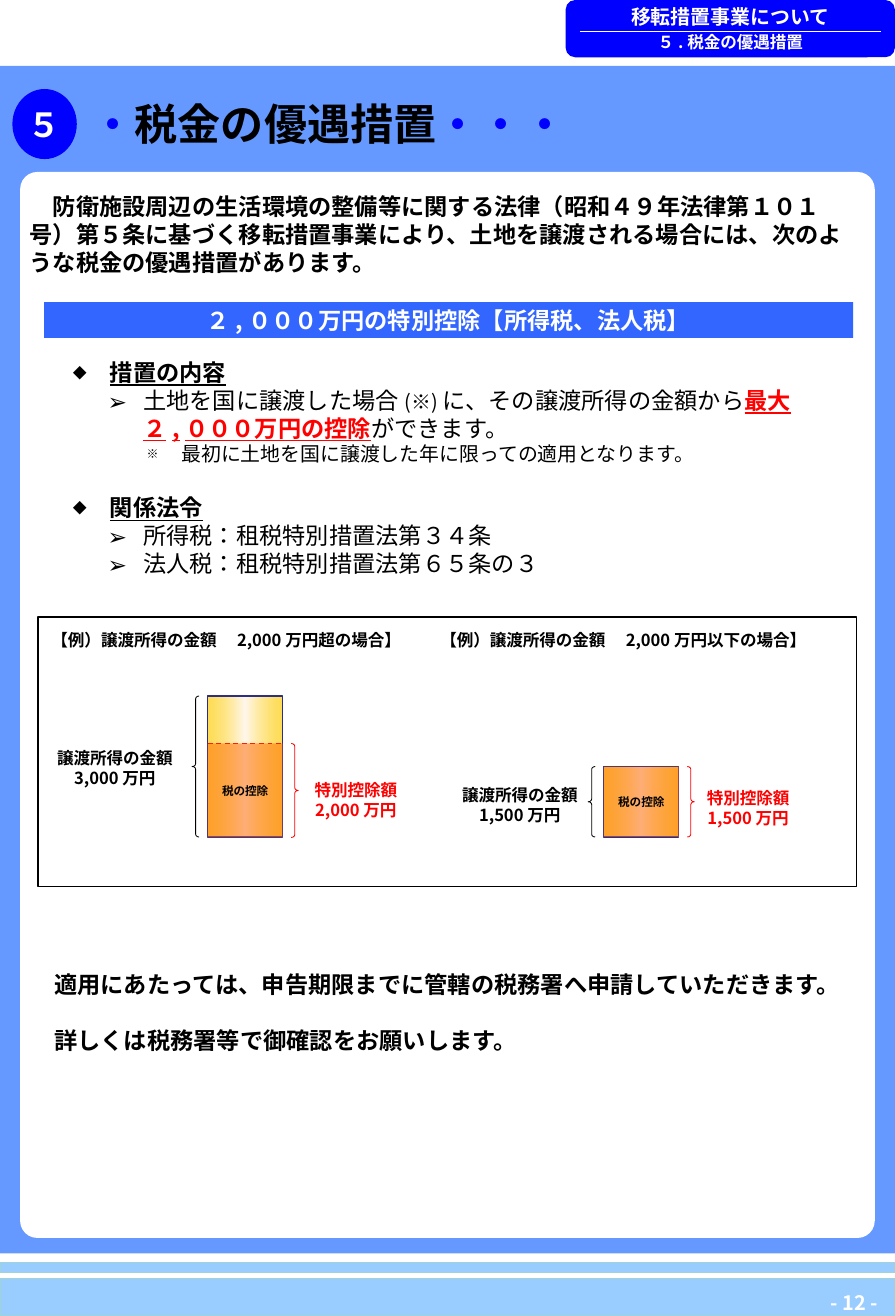
import pptx
import pptx.dml.color
import pptx.enum.dml
import pptx.enum.lang
import pptx.enum.shapes
import pptx.enum.text
import pptx.oxml
import pptx.oxml.ns
import pptx.util
from lxml import etree

Cm, Pt = pptx.util.Cm, pptx.util.Pt
RGB = pptx.dml.color.RGBColor
SHAPE = pptx.enum.shapes.MSO_SHAPE
ALIGN = pptx.enum.text.PP_ALIGN
ANCHOR = pptx.enum.text.MSO_ANCHOR
qn = pptx.oxml.ns.qn

FONT = "Noto Sans CJK JP"
BLACK = RGB(0x00, 0x00, 0x00)
WHITE = RGB(0xFF, 0xFF, 0xFF)
RED = RGB(0xFF, 0x00, 0x00)
BLUE = RGB(0x00, 0x00, 0xFF)
PAGE_BLUE = RGB(0x66, 0x99, 0xFF)
BAR_BLUE = RGB(0x33, 0x66, 0xFF)
BAND = RGB(0x99, 0xCC, 0xFF)
BAND_EDGE = RGB(0x9E, 0xD3, 0xD7)
NAVY = RGB(0x2D, 0x2D, 0x8A)
ORANGE = RGB(0xFF, 0x66, 0x00)
YELLOW = RGB(0xFF, 0xCC, 0x00)
CREAM = RGB(0xFF, 0xF8, 0xED)
INSETS = (0.25, 0.13, 0.25, 0.13)


def add_run(p, text, size=14, color=BLACK, bold=True, underline=False):
    r = p.add_run()
    r.text = text
    f = r.font
    f.name, f.size, f.bold, f.underline = FONT, Pt(size), bold, underline
    f.color.rgb = color
    f.language_id = pptx.enum.lang.MSO_LANGUAGE_ID.JAPANESE
    etree.SubElement(r._r.get_or_add_rPr(), qn("a:ea")).set("typeface", FONT)


def set_alpha(fill_parent, percent):
    for clr in fill_parent.iter(qn("a:srgbClr")):
        etree.SubElement(clr, qn("a:alpha")).set("val", str(percent * 1000))


class Page:
    def __init__(self, prs):
        self.s = prs.slides.add_slide(prs.slide_layouts[6])

    def shape(self, kind, x, y, w, h, fill=None, line=None, width=0.75, adj=()):
        sp = self.s.shapes.add_shape(kind, Cm(x), Cm(y), Cm(w), Cm(h))
        sp.shadow.inherit = False
        for i, value in enumerate(adj):
            sp.adjustments[i] = value
        if fill is None:
            sp.fill.background()
        else:
            sp.fill.solid()
            sp.fill.fore_color.rgb = fill
        if line is None:
            sp.line.fill.background()
        else:
            sp.line.color.rgb = line
            sp.line.width = Pt(width)
        return sp

    def line(self, x1, x2, y, color, width, dash=False):
        c = self.s.shapes.add_connector(
            pptx.enum.shapes.MSO_CONNECTOR.STRAIGHT, Cm(x1), Cm(y), Cm(x2), Cm(y))
        c.line.color.rgb = color
        c.line.width = Pt(width)
        if dash:
            c.line.dash_style = pptx.enum.dml.MSO_LINE.DASH
        etree.SubElement(c._element.spPr, qn("a:effectLst"))

    def frame(self, sp, anchor=ANCHOR.MIDDLE, wrap=True, insets=INSETS):
        tf = sp.text_frame
        tf.word_wrap, tf.vertical_anchor = wrap, anchor
        tf.margin_left, tf.margin_top, tf.margin_right, tf.margin_bottom = map(Cm, insets)
        return tf

    def box(self, x, y, w, h, **layout):
        return self.frame(self.s.shapes.add_textbox(Cm(x), Cm(y), Cm(w), Cm(h)), **layout)

    def para(self, tf, *runs, align=ALIGN.LEFT, before=0, bullet=None, **fmt):
        """Each run is a text or a (text, format) pair; bullet is (mark, size %, left, hang)."""
        p = tf.paragraphs[0]
        if p.runs:
            p = tf.add_paragraph()
        p.alignment = align
        p.line_spacing = Pt(round(1.2 * fmt.get("size", 14), 1))
        p.space_before = Pt(before)
        if bullet:
            mark, percent, left, hang = bullet
            pPr = p._p.get_or_add_pPr()
            pPr.set("marL", str(Cm(left)))
            pPr.set("indent", str(-Cm(hang)))
            for tag, key, value in (("a:buSzPct", "val", str(percent * 1000)),
                                    ("a:buFont", "typeface", FONT),
                                    ("a:buChar", "char", mark)):
                etree.SubElement(pPr, qn(tag)).set(key, value)
        for item in runs:
            text, extra = (item, {}) if isinstance(item, str) else item
            add_run(p, text, **{**fmt, **extra})

    def income_bar(self, x, y, w, h):
        sp = self.shape(SHAPE.RECTANGLE, x, y, w, h, YELLOW, NAVY)
        stops = "".join(
            f'<a:gs pos="{pos}"><a:srgbClr val="{c}"><a:alpha val="{a}"/></a:srgbClr></a:gs>'
            for pos, c, a in ((0, YELLOW, 67000), (50000, CREAM, 100000), (100000, YELLOW, 67000)))
        grad = pptx.oxml.parse_xml(
            f'<a:gradFill {pptx.oxml.ns.nsdecls("a")} rotWithShape="1">'
            f'<a:gsLst>{stops}</a:gsLst><a:lin ang="0" scaled="1"/></a:gradFill>')
        spPr = sp._element.spPr
        spPr.replace(spPr.find(qn("a:solidFill")), grad)

    def example(self, caption, caption_x, x, top, height, cut_top, cut_height,
                income, income_box, deduction, deduction_box):
        tf = self.box(caption_x, 13.26, 8.81, 0.71)
        self.para(tf, caption, align=ALIGN.CENTER, size=10)
        self.income_bar(x, top, 1.6, height)
        if cut_top > top:
            self.line(x, x + 1.6, cut_top, RED, 0.75, dash=True)
        cut = self.shape(SHAPE.RECTANGLE, x, cut_top, 1.6, cut_height, ORANGE)
        set_alpha(cut._element.spPr.find(qn("a:solidFill")), 50)
        self.para(self.frame(cut), "税の控除", align=ALIGN.CENTER, size=7)
        for kind, dx, y, h, color in ((SHAPE.LEFT_BRACE, -0.33, top, height, BLACK),
                                      (SHAPE.RIGHT_BRACE, 1.78, cut_top, cut_height, RED)):
            self.shape(kind, x + dx, y, 0.15, h, line=color, width=0.5, adj=(0.39, 0.5))
        tf = self.box(*income_box)
        for text in ("譲渡所得の金額", income):
            self.para(tf, text, align=ALIGN.CENTER, size=10)
        tf = self.box(*deduction_box, anchor=ANCHOR.TOP)
        for text in ("特別控除額", deduction):
            self.para(tf, text, align=ALIGN.CENTER, size=10, color=RED)


def main():
    prs = pptx.Presentation()
    prs.slide_width, prs.slide_height = Cm(19.05), Cm(28)
    page = Page(prs)

    # Background, panel and footer
    page.shape(SHAPE.RECTANGLE, 0, 1.4, 19.05, 25.27, PAGE_BLUE)
    page.shape(SHAPE.ROUNDED_RECTANGLE, 0.43, 3.66, 18.19, 22.68, WHITE, adj=(0.02,))
    for y, h in ((27.2, 0.79), (26.87, 0.2)):
        page.shape(SHAPE.RECTANGLE, 0, y, 19.05, h, BAND, BAND_EDGE)
    tf = page.box(17.32, 27.41, 1.73, 0.61, wrap=False)
    page.para(tf, "- 12 -", align=ALIGN.CENTER, size=12, color=WHITE)

    # Title and section header
    tf = page.box(1.7, 1.8, 16.33, 1.65)
    page.para(tf, ("・", {"color": BLUE}), "税金の優遇措置", ("・・・", {"color": BLUE}), size=26)
    sp = page.shape(SHAPE.OVAL, 0.3, 1.93, 1.3, 1.42, BLUE, BLUE, 2)
    page.para(page.frame(sp, wrap=False), "５", align=ALIGN.CENTER, size=20, color=WHITE)
    sp = page.shape(SHAPE.ROUNDED_RECTANGLE, 12.04, 0, 7.01, 1.22, BLUE, adj=(0.17,))
    tf = page.frame(sp, wrap=False)
    page.para(tf, "移転措置事業について", align=ALIGN.CENTER, size=12, color=WHITE)
    page.para(tf, "５.税金の優遇措置", align=ALIGN.CENTER, before=2, size=10, color=WHITE)
    page.line(12.34, 18.75, 0.66, WHITE, 0.5)

    # Introduction and heading bar
    tf = page.box(0.53, 3.99, 17.67, 2.01, anchor=ANCHOR.TOP, insets=(0.1,) * 4)
    page.para(tf, "　防衛施設周辺の生活環境の整備等に関する法律（昭和４９年法律第１０１号）"
                  "第５条に基づく移転措置事業により、土地を譲渡される場合には、"
                  "次のような税金の優遇措置があります。")
    sp = page.shape(SHAPE.RECTANGLE, 0.94, 6.43, 17.22, 0.76, BAR_BLUE)
    page.para(page.frame(sp, insets=(0.3, 0, 0.3, 0)),
              "２,０００万円の特別控除【所得税、法人税】", align=ALIGN.CENTER, color=WHITE)

    # Measures and related laws
    topic = ("◆", 60, 0.79, 0.79)
    item = ("➢", 100, 1.5, 0.76)
    note = ("※", 60, 2.31, 0.74)
    tf = page.box(0.56, 7.52, 16.89, 4.9, anchor=ANCHOR.TOP, insets=(0.99, 0.1, 0.41, 0.1))
    page.para(tf, "措置の内容", bullet=topic, underline=True)
    page.para(tf, "土地を国に譲渡した場合", ("(※)", {"size": 12}), "に、その譲渡所得の金額から",
              ("最大２,０００万円の控除", {"color": RED, "bold": True, "underline": True}),
              "ができます。", bullet=item, bold=False)
    page.para(tf, "最初に土地を国に譲渡した年に限っての適用となります。",
              bullet=note, size=12, bold=False)
    page.para(tf, "関係法令", bullet=topic, before=16.8, underline=True)
    for law in ("所得税：租税特別措置法第３４条", "法人税：租税特別措置法第６５条の３"):
        page.para(tf, law, bullet=item, bold=False)

    # Worked examples
    page.shape(SHAPE.RECTANGLE, 0.81, 13.13, 17.42, 5.74, line=BLACK)
    page.example("【例）譲渡所得の金額　2,000万円超の場合】", 0.41, 4.42, 14.81, 3, 15.82, 2,
                 "3,000万円", (0.91, 15.9, 3.07, 0.89),
                 "2,000万円", (6.43, 16.46, 2.29, 1.12))
    page.example("【例）譲渡所得の金額　2,000万円以下の場合】", 8.86, 12.85, 16.31, 1.5, 16.31, 1.5,
                 "1,500万円", (9.3, 16.59, 3.53, 1.09),
                 "1,500万円", (14.78, 16.64, 2.29, 1.12))

    # Closing remarks
    tf = page.box(0.41, 20.52, 17.83, 2.06, anchor=ANCHOR.TOP)
    page.para(tf, "　適用にあたっては、申告期限までに管轄の税務署へ申請していただきます。")
    page.para(tf, "　詳しくは税務署等で御確認をお願いします。", before=16.8)

    prs.save("out.pptx")


if __name__ == "__main__":
    main()
